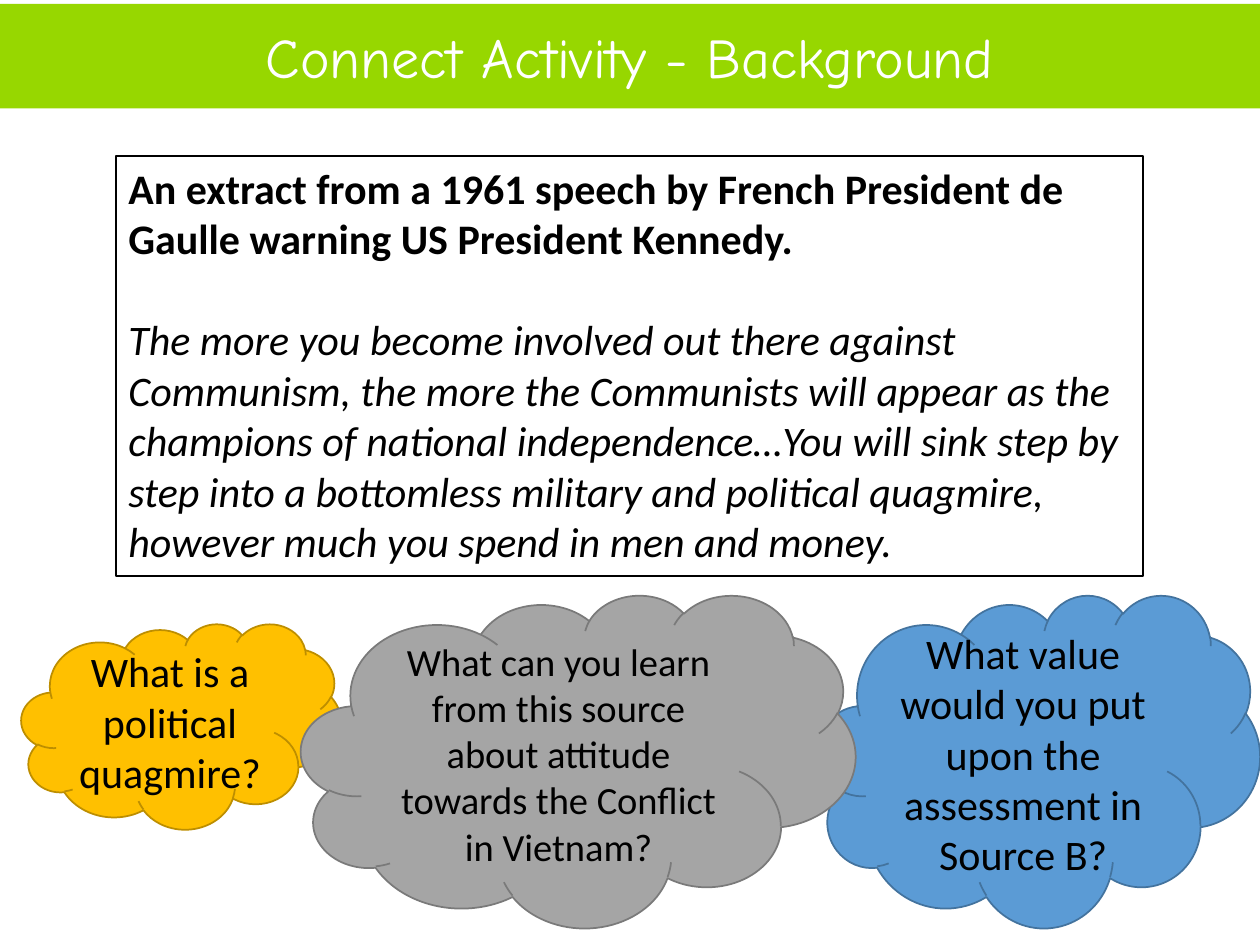
"""Build the Connect Activity background slide with a source extract and question clouds."""
from pptx import Presentation
from pptx.dml.color import RGBColor
from pptx.enum.shapes import MSO_SHAPE
from pptx.enum.text import MSO_ANCHOR, PP_ALIGN
from pptx.util import Inches, Pt

RECT, CLOUD = MSO_SHAPE.RECTANGLE, MSO_SHAPE.CLOUD
TOP, MIDDLE = MSO_ANCHOR.TOP, MSO_ANCHOR.MIDDLE
LEFT, CENTER = PP_ALIGN.LEFT, PP_ALIGN.CENTER


def paint(fill, color):
    fill.solid()
    fill.fore_color.rgb = RGBColor.from_string(color)


def add_box(kind, box, fill, line, text, size, anchor, align):
    sp = s.shapes.add_shape(kind, *[Inches(v) for v in box])
    sp.shadow.inherit = False
    paint(sp.fill, fill)
    paint(sp.line.fill, line)
    sp.line.width = Pt(1)
    tf = sp.text_frame
    tf.word_wrap = True
    tf.vertical_anchor = anchor
    tf.text = text
    for p in tf.paragraphs:
        p.alignment = align
        p.font.size = Pt(size)
        p.font.name = "Calibri"
        paint(p.font.fill, "000000")
    return tf


prs = Presentation()
prs.slide_width, prs.slide_height = Inches(10), Inches(7.5)
s = prs.slides.add_slide(prs.slide_layouts[5])

title = s.shapes.title
title.left, title.top = Inches(0), Inches(0.03)
title.width, title.height = Inches(10), Inches(0.83)
paint(title.fill, "97D700")
tf = title.text_frame
tf.text = "Connect Activity - Background"
tf.vertical_anchor = MIDDLE
p = tf.paragraphs[0]
p.alignment = CENTER
r = p.runs[0]
r.font.name = "Comic Neue"
r.font.size = Pt(32)
paint(r.font.fill, "FFFFFF")

extract = (
    "An extract from a 1961 speech by French President de Gaulle "
    "warning US President Kennedy.\n"
    "The more you become involved out there against Communism, the more the "
    "Communists will appear as the champions of national independence…You will "
    "sink step by step into a bottomless military and political quagmire, "
    "however much you spend in men and money."
)
tf = add_box(RECT, (0.92, 1.24, 8.15, 3.33), "FFFFFF", "000000", extract, 24, TOP, LEFT)
heading, quote = tf.paragraphs
heading.runs[0].font.bold = True
quote.runs[0].font.italic = True
quote.space_before = Pt(29)

clouds = [
    ((0.17, 4.95, 2.54, 1.63), "FFC000", "BD8E00", 24,
     "What is a political quagmire?"),
    ((6.49, 4.72, 3.51, 2.64), "5B9BD5", "43739E", 24,
     "What value would you put upon the assessment in Source B?"),
    ((2.39, 4.72, 4.4, 2.64), "A5A5A5", "7A7A7A", 22,
     "What can you learn from this source about attitude towards the Conflict in Vietnam?"),
]
for box, fill, line, size, question in clouds:
    add_box(CLOUD, box, fill, line, question, size, MIDDLE, CENTER)

prs.save("out.pptx")
